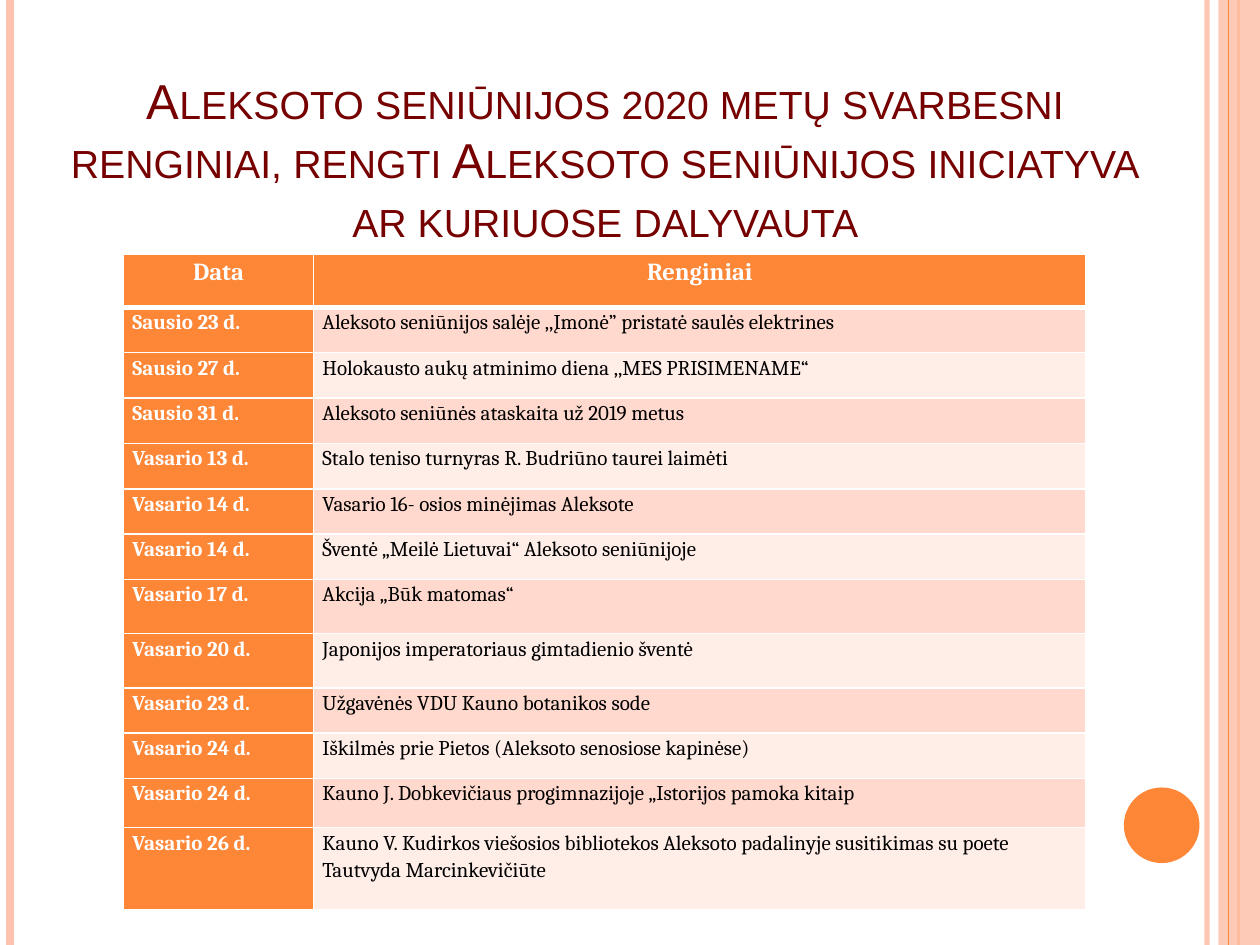
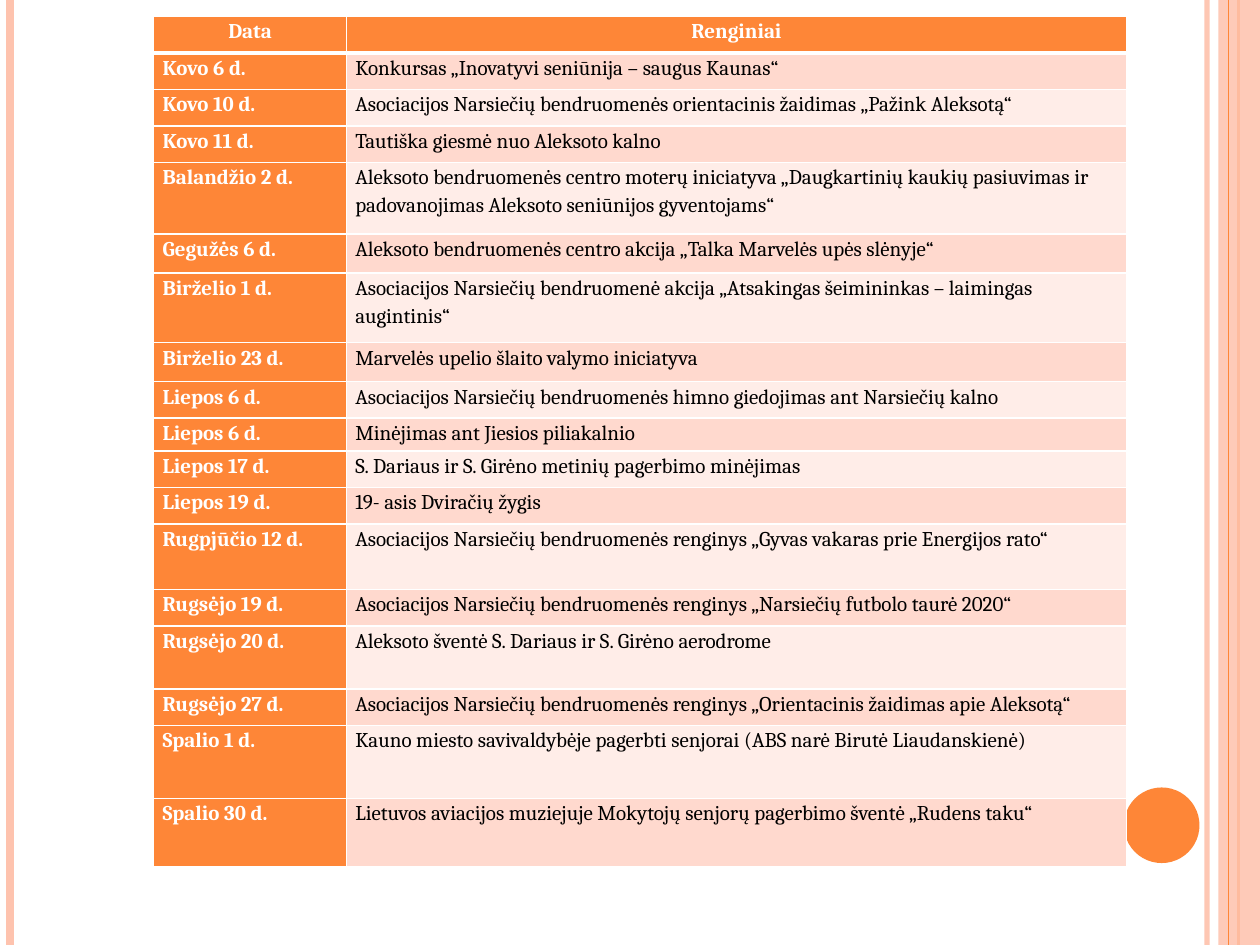
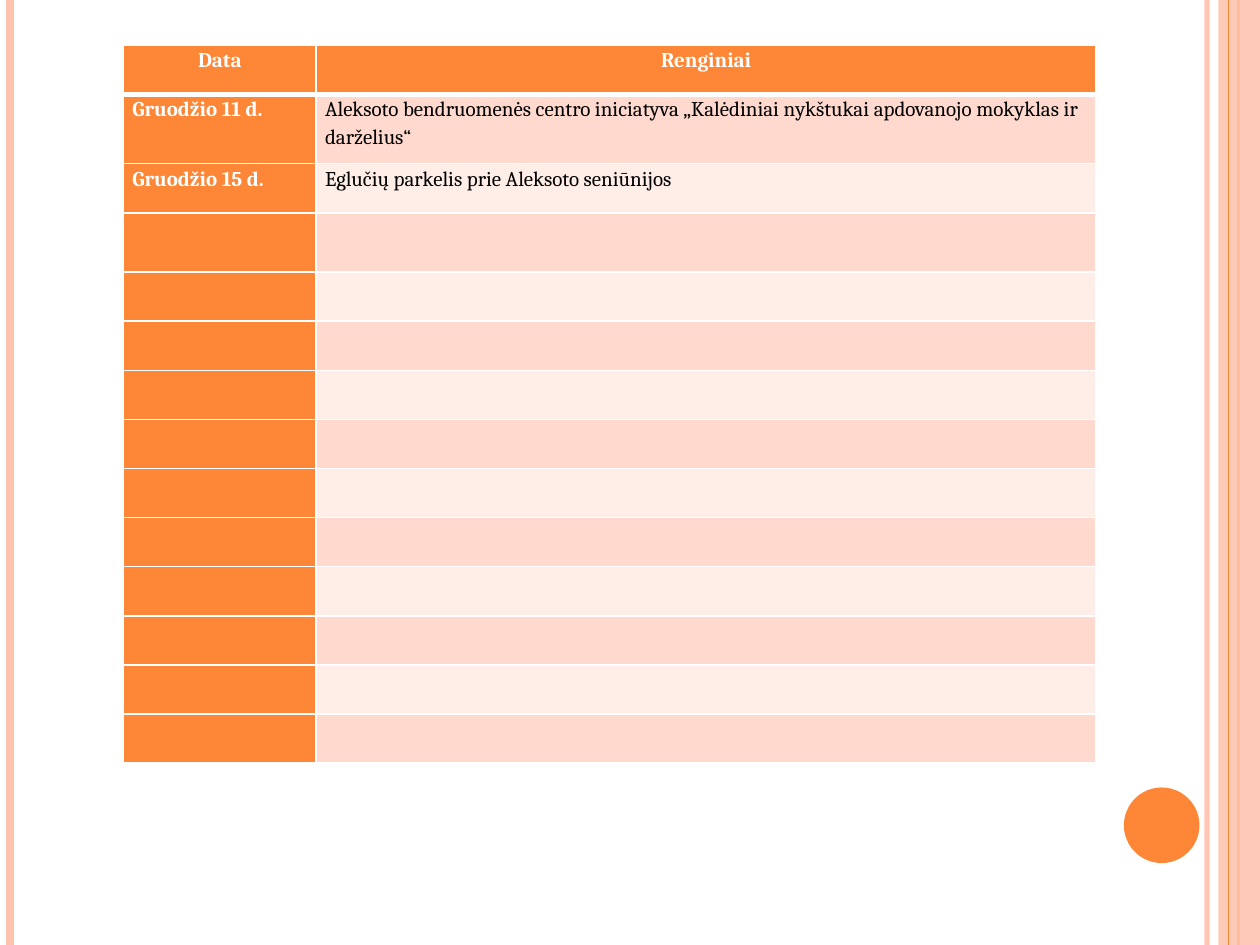
from dataclasses import dataclass

from lxml.etree import SubElement
from pptx import Presentation
from pptx.dml.color import RGBColor
from pptx.enum.shapes import MSO_CONNECTOR as CONN, MSO_SHAPE as SHAPE
from pptx.enum.text import MSO_ANCHOR as ANCHOR, MSO_AUTO_SIZE as AUTO, PP_ALIGN as ALIGN
from pptx.oxml.ns import qn
from pptx.util import Inches, Pt


@dataclass(frozen=True)
class Theme:
    accent: str = "FE8637"
    band: str = "FEC3AE"
    title: str = "760000"
    text: str = "000000"
    white: str = "FFFFFF"
    stripes: tuple = ("FFD9CE", "FFEDE8")
    title_font: str = "Arial"
    table_font: str = "Cambria"
    title_size: int = 28
    cell_size: int = 12
    spacing: float = 1.15
    cell_margin: float = 0.07
    border: int = 1
    header_border: int = 3


HEADER = ("Data", "Renginiai")
TITLE_ONLY, BLANK = 5, 6

# Rows: date, event and, where it differs from the table's usual one, height
WINTER = [
    ("Sausio 23 d.", "Aleksoto seniūnijos salėje ,,Įmonė” pristatė saulės elektrines"),
    ("Sausio 27 d.", "Holokausto aukų atminimo diena ,,MES PRISIMENAME“"),
    ("Sausio 31 d.", "Aleksoto seniūnės ataskaita už 2019 metus"),
    ("Vasario 13 d.", "Stalo teniso turnyras R. Budriūno taurei laimėti"),
    ("Vasario 14 d.", "Vasario 16- osios minėjimas Aleksote"),
    ("Vasario 14 d.", "Šventė „Meilė Lietuvai“ Aleksoto seniūnijoje"),
    ("Vasario 17 d.", "Akcija „Būk matomas“", 0.43),
    ("Vasario 20 d.", "Japonijos imperatoriaus gimtadienio šventė", 0.43),
    ("Vasario 23 d.", "Užgavėnės VDU Kauno botanikos sode"),
    ("Vasario 24 d.", "Iškilmės prie Pietos (Aleksoto senosiose kapinėse)"),
    ("Vasario 24 d.", "Kauno J. Dobkevičiaus progimnazijoje „Istorijos pamoka kitaip", 0.39),
    ("Vasario 26 d.", "Kauno V. Kudirkos viešosios bibliotekos Aleksoto padalinyje "
                      "susitikimas su poete Tautvyda Marcinkevičiūte", 0.65),
]
SPRING_TO_AUTUMN = [
    ("Kovo 6 d.", "Konkursas „Inovatyvi seniūnija – saugus Kaunas“"),
    ("Kovo 10 d.", "Asociacijos Narsiečių bendruomenės orientacinis žaidimas „Pažink Aleksotą“"),
    ("Kovo 11 d.", "Tautiška giesmė nuo Aleksoto kalno"),
    ("Balandžio 2 d.", "Aleksoto bendruomenės centro moterų iniciatyva „Daugkartinių kaukių "
                       "pasiuvimas ir padovanojimas Aleksoto seniūnijos gyventojams“", 0.57),
    ("Gegužės 6 d.", "Aleksoto bendruomenės centro akcija „Talka Marvelės upės slėnyje“", 0.31),
    ("Birželio 1 d.", "Asociacijos Narsiečių bendruomenė akcija „Atsakingas šeimininkas – "
                      "laimingas augintinis“", 0.55),
    ("Birželio 23 d.", "Marvelės upelio šlaito valymo iniciatyva", 0.31),
    ("Liepos 6 d.", "Asociacijos Narsiečių bendruomenės himno giedojimas ant Narsiečių kalno"),
    ("Liepos 6 d.", "Minėjimas ant Jiesios piliakalnio", 0.26),
    ("Liepos 17 d.", "S. Dariaus ir S. Girėno metinių pagerbimo minėjimas"),
    ("Liepos 19 d.", "19- asis Dviračių žygis"),
    ("Rugpjūčio 12 d.", "Asociacijos Narsiečių bendruomenės renginys „Gyvas vakaras prie "
                        "Energijos rato“", 0.52),
    ("Rugsėjo 19 d.", "Asociacijos Narsiečių bendruomenės renginys „Narsiečių futbolo taurė 2020“"),
    ("Rugsėjo 20 d.", "Aleksoto šventė S. Dariaus ir S. Girėno aerodrome", 0.5),
    ("Rugsėjo 27 d.", "Asociacijos Narsiečių bendruomenės renginys „Orientacinis žaidimas "
                      "apie Aleksotą“"),
    ("Spalio 1 d.", "Kauno miesto savivaldybėje pagerbti senjorai (ABS narė Birutė "
                    "Liaudanskienė)", 0.58),
    ("Spalio 30 d.", "Lietuvos aviacijos muziejuje Mokytojų senjorų pagerbimo šventė "
                     "„Rudens taku“", 0.54),
]
DECEMBER = [
    ("Gruodžio 11 d.", "Aleksoto bendruomenės centro iniciatyva „Kalėdiniai nykštukai "
                       "apdovanojo mokyklas ir darželius“", 0.55),
    ("Gruodžio 15 d.", "Eglučių parkelis prie Aleksoto seniūnijos"),
    ("", "", 0.47),
] + [("", "")] * 10


def rgb(color):
    return RGBColor.from_string(color)


def set_alpha(fill_parent, percent):
    clr = fill_parent.find(qn("a:solidFill")).find(qn("a:srgbClr"))
    SubElement(clr, qn("a:alpha"), val=str(percent * 1000))


class Deck:
    def __init__(self, theme):
        self.theme = theme
        self.prs = Presentation()
        self.prs.slide_width, self.prs.slide_height = Inches(10), Inches(7.5)
        self.slide = None

    def add_slide(self, layout):
        self.slide = self.prs.slides.add_slide(self.prs.slide_layouts[layout])

    # Decoration
    def vline(self, x, color, width, alpha=None):
        ln = self.slide.shapes.add_connector(
            CONN.STRAIGHT, Inches(x), 0, Inches(x), self.prs.slide_height)
        ln.line.color.rgb = rgb(color)
        ln.line.width = Pt(width)
        sp_pr = ln.element.spPr
        if alpha:
            set_alpha(sp_pr.find(qn("a:ln")), alpha)
        SubElement(sp_pr, qn("a:effectLst"))
        return ln

    def shape(self, kind, x, y, w, h, color, alpha=None):
        sp = self.slide.shapes.add_shape(kind, Inches(x), Inches(y), Inches(w), Inches(h))
        sp.fill.solid()
        sp.fill.fore_color.rgb = rgb(color)
        sp.line.fill.background()
        sp.shadow.inherit = False
        if alpha:
            set_alpha(sp.element.spPr, alpha)
        return sp

    def master_bands(self):
        """Draw the side bands and the dot, then move them to the slide master."""
        t = self.theme
        parts = [
            self.vline(9.58, t.band, 3, 93),
            self.vline(0.08, t.band, 4.5),
            self.vline(9.83, t.accent, 1.5),
            self.shape(SHAPE.RECTANGLE, 9.67, 0, 0.33, 7.5, t.band, 87),
            self.vline(9.75, t.accent, 0.75),
            self.shape(SHAPE.OVAL, 8.92, 6.25, 0.6, 0.6, t.accent),
        ]
        tree = self.prs.slide_master.shapes.element
        for number, part in enumerate(parts, 101):
            part.element.xpath(".//p:cNvPr")[0].set("id", str(number))
            tree.append(part.element)

    # Text
    def run(self, p, text, font, size, color, bold=False):
        r = p.add_run()
        r.text = text
        r.font.name, r.font.size, r.font.bold = font, Pt(size), bold
        r.font.color.rgb = rgb(color)
        return r

    def title(self, lines, x, y, w, h):
        t, sp = self.theme, self.slide.shapes.title
        sp.left, sp.top, sp.width, sp.height = (Inches(v) for v in (x, y, w, h))
        tf = sp.text_frame
        tf.word_wrap, tf.auto_size, tf.vertical_anchor = True, AUTO.NONE, ANCHOR.BOTTOM
        p = tf.paragraphs[0]
        p.alignment = ALIGN.CENTER
        for i, line in enumerate(lines):
            if i:
                p.add_line_break()
            r = self.run(p, line, t.title_font, t.title_size, t.title)
            r.font._element.set("cap", "small")

    # Table
    def cell_borders(self, cell, top, bottom):
        t = self.theme
        tc_pr = cell._tc.get_or_add_tcPr()
        for side, width in (("L", t.border), ("R", t.border), ("T", top), ("B", bottom)):
            ln = SubElement(tc_pr, qn(f"a:ln{side}"), w=str(Pt(width)))
            SubElement(SubElement(ln, qn("a:solidFill")), qn("a:srgbClr"), val=t.white)

    def cell(self, cell, text, row, col, header_size):
        t = self.theme
        header, event = row == 0, row > 0 and col == 1
        self.cell_borders(cell, t.header_border if row == 1 else t.border,
                          t.header_border if header else t.border)
        cell.fill.solid()
        cell.fill.fore_color.rgb = rgb(t.stripes[(row - 1) % 2] if event else t.accent)
        cell.margin_left = cell.margin_right = Inches(t.cell_margin)
        cell.margin_top = cell.margin_bottom = 0
        if text:
            p = cell.text_frame.paragraphs[0]
            p.line_spacing = t.spacing
            p.alignment = ALIGN.CENTER if header else ALIGN.LEFT
            self.run(p, text, t.table_font, header_size if header else t.cell_size,
                     t.text if event else t.white, bold=not event)

    def events(self, rows, x, y, cols, row_h, header_h, header_size=12):
        rows = [(*HEADER, header_h), *rows]
        heights = [row[2] if len(row) > 2 else row_h for row in rows]
        tbl = self.slide.shapes.add_table(
            len(rows), len(cols), Inches(x), Inches(y),
            Inches(sum(cols)), Inches(sum(heights))).table
        for column, width in zip(tbl.columns, cols):
            column.width = Inches(width)
        for i, (row, height) in enumerate(zip(rows, heights)):
            tbl.rows[i].height = Inches(height)
            for j, text in enumerate(row[:2]):
                self.cell(tbl.cell(i, j), text, i, j, header_size)


def main():
    deck = Deck(Theme())

    # Title and winter events
    deck.add_slide(TITLE_ONLY)
    deck.master_bands()
    deck.title(["Aleksoto seniūnijos 2020 metų svarbesni renginiai, "
                "rengti Aleksoto seniūnijos iniciatyva", "ar kuriuose dalyvauta"],
               0.31, 0.36, 8.99, 1.65)
    deck.events(WINTER, 0.98, 2.02, (1.51, 6.13), row_h=0.36, header_h=0.42, header_size=14)

    # March to October
    deck.add_slide(BLANK)
    deck.events(SPRING_TO_AUTUMN, 1.22, 0.13, (1.53, 6.19), row_h=0.29, header_h=0.29)

    # December
    deck.add_slide(BLANK)
    deck.events(DECEMBER, 0.98, 0.36, (1.53, 6.19), row_h=0.39, header_h=0.39)

    deck.prs.save("out.pptx")


if __name__ == "__main__":
    main()
